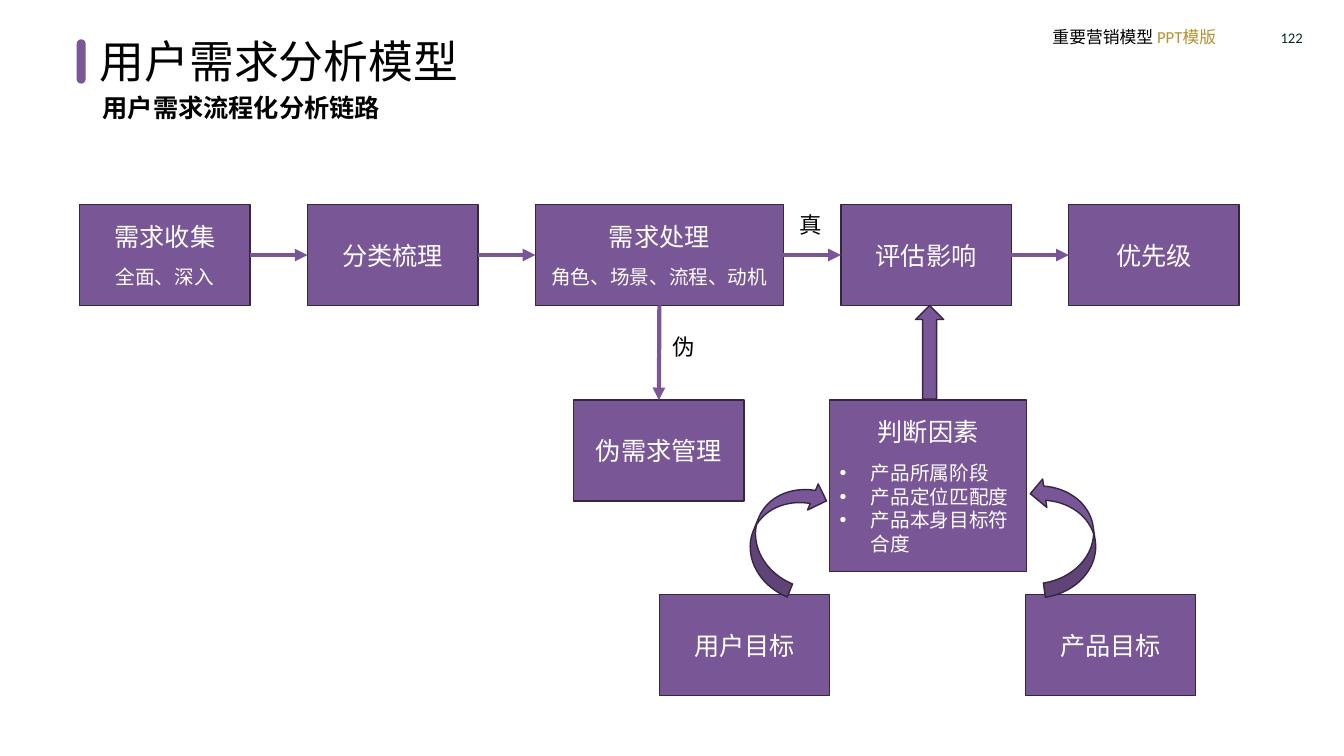
from dataclasses import dataclass

from lxml import etree
from pptx import Presentation
from pptx import util as u
from pptx.dml.color import RGBColor
from pptx.enum import shapes, text
from pptx.oxml.ns import qn


@dataclass(frozen=True)
class Theme:
    purple: str = "795696"
    outline: str = "352642"
    white: str = "FFFFFF"
    black: str = "000000"
    gold: str = "B49132"
    green: str = "002E1A"
    body_font: str = "Noto Sans CJK SC"
    header_font: str = "Calibri"
    title: float = 32
    heading: float = 18
    label: float = 16
    detail: float = 14
    header: float = 12
    number: float = 10.5
    gap: float = 10
    leading: float = 1.2


@dataclass(frozen=True)
class Box:
    left: float
    top: float
    width: float
    height: float

    def inches(self):
        return [u.Inches(v) for v in (self.left, self.top, self.width, self.height)]


THEME = Theme()
PRESET = shapes.MSO_SHAPE
STEP_WIDTH, STEP_HEIGHT = 1.69, 1
TOP, LEFT, BOTTOM, RIGHT = range(4)  # connection sites of a rectangle


def color(value):
    return RGBColor.from_string(value)


def style(para, size, ink, align, bold=False, font=THEME.body_font):
    """Set the font of a paragraph, for Latin and East Asian letters alike."""
    para.alignment = align
    para.line_spacing = u.Pt(round(size * THEME.leading, 1))
    para.font.size = u.Pt(size)
    para.font.bold = bold
    para.font.name = font
    para.font.color.rgb = color(ink)
    defaults = para._p.pPr.find(qn("a:defRPr"))
    latin = defaults.find(qn("a:latin"))
    east_asian = etree.Element(qn("a:ea"), typeface=THEME.body_font)
    latin.addnext(east_asian)


def add_bullet(para):
    properties = para._p.pPr
    properties.set("marL", str(u.Inches(0.31)))
    properties.set("indent", str(u.Inches(-0.31)))
    defaults = properties.find(qn("a:defRPr"))
    defaults.addprevious(etree.Element(qn("a:buFont"), typeface="Arial"))
    defaults.addprevious(etree.Element(qn("a:buChar"), char="•"))


def add_label(slide, box, words, size, ink=THEME.black, align=text.PP_ALIGN.LEFT,
              anchor=text.MSO_ANCHOR.TOP, **options):
    """Add a one-line text box and return its paragraph."""
    frame = slide.shapes.add_textbox(*box.inches()).text_frame
    frame.word_wrap = True
    frame.vertical_anchor = anchor
    para = frame.paragraphs[0]
    para.text = words
    style(para, size, ink, align, **options)
    return para


def add_filled(slide, preset, box, outlined=True, rotation=0):
    shape = slide.shapes.add_shape(preset, *box.inches())
    shape.shadow.inherit = False
    shape.rotation = rotation
    shape.fill.solid()
    shape.fill.fore_color.rgb = color(THEME.purple)
    if outlined:
        shape.line.color.rgb = color(THEME.outline)
        shape.line.width = u.Pt(1)
    else:
        shape.line.fill.background()
    return shape


def add_step(slide, box, heading, details=(), bulleted=False):
    shape = add_filled(slide, PRESET.RECTANGLE, box)
    frame = shape.text_frame
    frame.word_wrap = True
    frame.vertical_anchor = text.MSO_ANCHOR.MIDDLE
    para = frame.paragraphs[0]
    para.text = heading
    style(para, THEME.heading, THEME.white, text.PP_ALIGN.CENTER)
    if details:
        para.space_after = u.Pt(THEME.gap)
    align = text.PP_ALIGN.LEFT if bulleted else text.PP_ALIGN.CENTER
    for words in details:
        para = frame.add_paragraph()
        para.text = words
        style(para, THEME.detail, THEME.white, align)
        if bulleted:
            add_bullet(para)
    return shape


def link(slide, source, source_site, target, target_site):
    """Join two steps with an arrow."""
    arrow = slide.shapes.add_connector(shapes.MSO_CONNECTOR.STRAIGHT, 0, 0, 0, 0)
    arrow.begin_connect(source, source_site)
    arrow.end_connect(target, target_site)
    arrow.line.color.rgb = color(THEME.purple)
    arrow.line.width = u.Pt(3)
    outline = arrow.line._get_or_add_ln()
    etree.SubElement(outline, qn("a:tailEnd"), type="triangle")
    etree.SubElement(arrow._element.spPr, qn("a:effectLst"))


def add_page_header(slide, box):
    add_label(slide, Box(box.left, box.top, 3, 0.4), "122", THEME.number, THEME.green,
              text.PP_ALIGN.RIGHT, text.MSO_ANCHOR.MIDDLE, font=THEME.header_font)
    para = add_label(slide, Box(box.left + 0.32, box.top + 0.05, 2.15, 0.3),
                     "重要营销模型 ", THEME.header, font=THEME.header_font)
    span = para.add_run()
    span.text = "PPT模版"
    span.font.color.rgb = color(THEME.gold)


def add_title(slide, box):
    marker = add_filled(slide, PRESET.ROUNDED_RECTANGLE,
                        Box(box.left, box.top + 0.1, 0.09, 0.44), outlined=False)
    marker.adjustments[0] = 0.5
    add_label(slide, Box(box.left + 0.13, box.top, box.width - 0.13, 0.64),
              "用户需求分析模型", THEME.title)
    add_label(slide, Box(box.left + 0.16, box.top + 0.58, 3.83, 0.4),
              "用户需求流程化分析链路", THEME.heading, bold=True)


def add_main_flow(slide, box):
    """Place the row of steps from left to right and return them."""
    gap = 0.57
    steps = [
        ("需求收集", ["全面、深入"], STEP_WIDTH),
        ("分类梳理", [], STEP_WIDTH),
        ("需求处理", ["角色、场景、流程、动机"], 2.46),
        ("评估影响", [], STEP_WIDTH),
        ("优先级", [], STEP_WIDTH),
    ]
    row, left = [], box.left
    for heading, details, width in steps:
        row.append(add_step(slide, Box(left, box.top, width, box.height), heading, details))
        left += width + gap
    for source, target in zip(row, row[1:]):
        link(slide, source, RIGHT, target, LEFT)
    add_label(slide, Box(box.left + 7.04, box.top + 0.02, 0.4, 0.37), "真", THEME.label)
    return row


def add_false_branch(slide, box, processing):
    rejected = add_step(slide, box, "伪需求管理")
    link(slide, processing, BOTTOM, rejected, TOP)
    add_label(slide, Box(box.left + 0.88, box.top - 0.71, 0.36, 0.37), "伪", THEME.label)


def add_judgement(slide, box):
    """Place the judging factors, the two goals below and their block arrows."""
    add_step(slide, box, "判断因素",
             ["产品所属阶段", "产品定位匹配度", "产品本身目标符合度"], bulleted=True)
    goals = [("用户目标", box.left - STEP_WIDTH), ("产品目标", box.left + box.width - 0.01)]
    for heading, left in goals:
        add_step(slide, Box(left, box.top + 1.93, STEP_WIDTH, STEP_HEIGHT), heading)
    arrows = [
        (PRESET.DOWN_ARROW, 0.85, -0.94, 0.28, 0.93, 180),
        (PRESET.CURVED_LEFT_ARROW, -0.74, 0.72, 0.56, 1.17, 202.2),
        (PRESET.CURVED_RIGHT_ARROW, 2.05, 0.74, 0.57, 1.18, 171.7),
    ]
    for preset, across, down, width, height, rotation in arrows:
        add_filled(slide, preset, Box(box.left + across, box.top + down, width, height),
                   rotation=rotation)


def main():
    deck = Presentation()
    deck.slide_width, deck.slide_height = u.Inches(13.33), u.Inches(7.5)
    page = deck.slides.add_slide(deck.slide_layouts[6])
    add_page_header(page, Box(10.02, 0.17, 3, 0.4))
    add_title(page, Box(0.76, 0.29, 8.4, 0.98))
    row = add_main_flow(page, Box(0.79, 2.03, 11.5, STEP_HEIGHT))
    add_false_branch(page, Box(5.69, 3.97, STEP_WIDTH, STEP_HEIGHT), row[2])
    add_judgement(page, Box(8.23, 3.97, 1.95, 1.7))
    deck.save("out.pptx")


if __name__ == "__main__":
    main()
